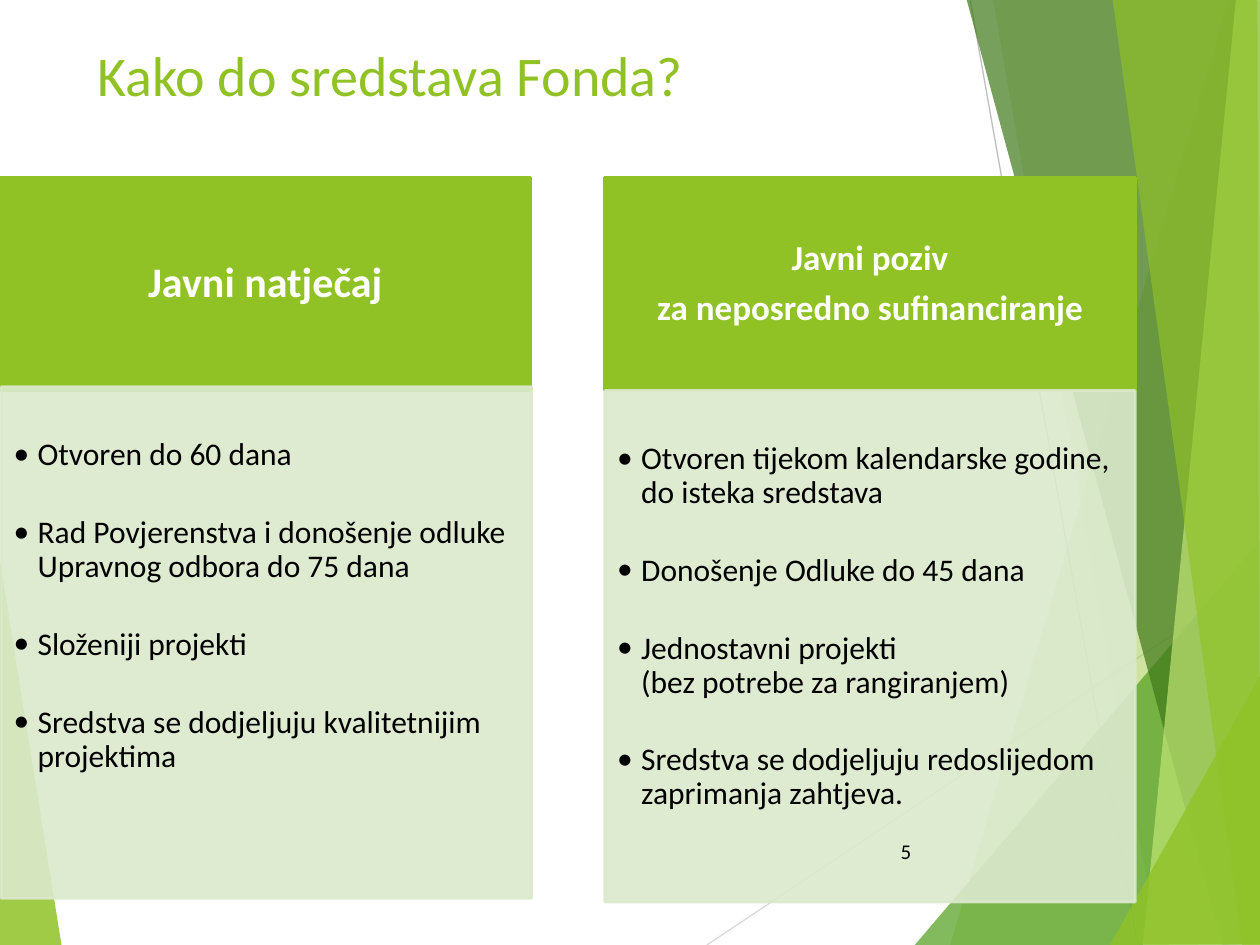
from typing import NamedTuple

from lxml.etree import SubElement
from pptx import Presentation
from pptx.dml.color import RGBColor
from pptx.enum.shapes import MSO_CONNECTOR, MSO_SHAPE
from pptx.enum.text import MSO_ANCHOR, PP_ALIGN
from pptx.oxml.ns import qn
from pptx.util import Pt

PX = 9144  # EMU per px, 100 px to the inch
FONT = "Calibri"
COLORS = {
    "green": "90C226", "leaf": "54A021", "forest": "3F7819", "lime": "C0E474",
    "pale": "DBE9CD", "grey": "BFBFBF", "light_grey": "D9D9D9",
    "white": "FFFFFF", "black": "000000",
}


class Facet(NamedTuple):
    points: list[tuple[int, int]]
    color: str
    opacity: int


class Ray(NamedTuple):
    start: tuple[int, int]
    end: tuple[int, int]
    color: str


class Column(NamedTuple):
    left: int
    heading: list[str]
    heading_size: int
    panel_left: int
    panel_top: int
    items: list[str]


RAYS = [
    Ray((561, 750), (1001, 457), "light_grey"),
    Ray((770, 0), (903, 750), "grey"),
]
LEFT_FACET = Facet([(-1, 439), (49, 751), (-1, 750)], "green", 85)
RIGHT_FACETS = [
    Facet([(975, 0), (754, 750), (1002, 751), (1001, 1)], "green", 30),
    Facet([(788, -1), (919, 750), (1001, 750), (1001, -1)], "green", 20),
    Facet([(726, 750), (1000, 429), (1001, 750)], "leaf", 72),
    Facet([(767, -1), (970, 750), (1001, 749), (1001, -1)], "forest", 70),
    Facet([(981, -1), (907, 750), (1001, 750), (1000, -1)], "lime", 70),
    Facet([(883, -1), (986, 750), (1000, 750), (998, -1)], "green", 65),
    Facet([(881, 750), (1001, 535), (1001, 749)], "green", 80),
]
COLUMNS = [
    Column(0, ["Javni natječaj"], 24, 1, 307, [
        "Otvoren do 60 dana",
        "Rad Povjerenstva i donošenje odluke Upravnog odbora do 75 dana",
        "Složeniji projekti",
        "Sredstva se dodjeljuju kvalitetnijim projektima",
    ]),
    Column(480, ["Javni poziv", "za neposredno sufinanciranje"], 20, 480, 310, [
        "Otvoren tijekom kalendarske godine, do isteka sredstava",
        "Donošenje Odluke do 45 dana",
        "Jednostavni projekti\n(bez potrebe za rangiranjem)",
        "Sredstva se dodjeljuju redoslijedom zaprimanja zahtjeva.",
    ]),
]
COLUMN_WIDTH, HEADING_TOP, HEADING_HEIGHT, PANEL_HEIGHT = 421, 141, 169, 406


def rgb(name: str) -> RGBColor:
    return RGBColor.from_string(COLORS[name])


def paint(fill, color: str, opacity: int = 100) -> None:
    fill.solid()
    fill.fore_color.rgb = rgb(color)
    if opacity < 100:
        # the colour element is the only child of the solid fill
        element = fill._xPr.find(qn("a:solidFill"))[0]
        SubElement(element, qn("a:alpha"), val=str(opacity * 1000))


def add_span(para, text: str, size: int, color: str, bold: bool = False) -> None:
    span = para.add_run()
    span.text = text
    span.font.name = FONT
    span.font.size = Pt(size)
    span.font.bold = bold
    span.font.color.rgb = rgb(color)


def add_facet(page, facet: Facet) -> None:
    first, *rest = facet.points
    builder = page.shapes.build_freeform(*first, scale=PX)
    builder.add_line_segments(rest, close=True)
    shape = builder.convert_to_shape()
    shape.shadow.inherit = False
    shape.line.fill.background()
    paint(shape.fill, facet.color, facet.opacity)


def add_ray(page, ray: Ray) -> None:
    ends = [value * PX for value in ray.start + ray.end]
    line = page.shapes.add_connector(MSO_CONNECTOR.STRAIGHT, *ends)
    line.line.color.rgb = rgb(ray.color)
    line.line.width = Pt(0.75)
    SubElement(line._element.spPr, qn("a:effectLst"))


def add_block(page, left: int, top: int, height: int, color: str,
              opacity: int, insets: tuple[int, int, int, int]):
    """Add a column rectangle and return its text frame."""
    block = page.shapes.add_shape(MSO_SHAPE.RECTANGLE, left * PX, top * PX,
                                  COLUMN_WIDTH * PX, height * PX)
    block.shadow.inherit = False
    paint(block.fill, color, opacity)
    paint(block.line.fill, color, opacity)
    block.line.width = Pt(1.5)
    frame = block.text_frame
    frame.word_wrap = True
    (frame.margin_left, frame.margin_top,
     frame.margin_right, frame.margin_bottom) = (inset * PX for inset in insets)
    return frame


def add_paras(frame, count: int, gap: int, align: PP_ALIGN) -> list:
    paras = [frame.paragraphs[0]] + [frame.add_paragraph() for _ in range(count - 1)]
    for para in paras:
        para.alignment = align
        para.line_spacing = 0.9
    for para in paras[:-1]:
        para.space_after = Pt(gap)
    return paras


def set_bullet(para) -> None:
    properties = para._p.get_or_add_pPr()
    properties.set("marL", str(19 * PX))
    properties.set("indent", str(-19 * PX))
    SubElement(properties, qn("a:buFont"), typeface=FONT)
    SubElement(properties, qn("a:buChar"), char="•")


def add_column(page, column: Column) -> None:
    frame = add_block(page, column.left, HEADING_TOP, HEADING_HEIGHT,
                      "green", 100, (16, 9, 16, 9))
    frame.vertical_anchor = MSO_ANCHOR.MIDDLE
    paras = add_paras(frame, len(column.heading), 7, PP_ALIGN.CENTER)
    for para, text in zip(paras, column.heading):
        add_span(para, text, column.heading_size, "white", bold=True)

    frame = add_block(page, column.panel_left, column.panel_top, PANEL_HEIGHT,
                      "pale", 90, (10, 41, 14, 16))
    frame.vertical_anchor = MSO_ANCHOR.TOP
    paras = add_paras(frame, len(column.items), 25, PP_ALIGN.LEFT)
    for para, item in zip(paras, column.items):
        set_bullet(para)
        for index, text in enumerate(item.split("\n")):
            if index:
                para.add_line_break()
            add_span(para, text, 18, "black")


def set_title(page, text: str) -> None:
    title = page.shapes.title
    title.left, title.top, title.width, title.height = (
        value * PX for value in (67, 27, 721, 104))
    title.text_frame.vertical_anchor = MSO_ANCHOR.TOP
    para = title.text_frame.paragraphs[0]
    para.alignment = PP_ALIGN.LEFT
    add_span(para, text, 32, "green")


def add_page_number(page, text: str) -> None:
    box = page.shapes.add_textbox(*(value * PX for value in (705, 661, 56, 40)))
    box.text_frame.word_wrap = True
    add_span(box.text_frame.paragraphs[0], text, 12, "black")


def main() -> None:
    deck = Presentation()
    deck.slide_width, deck.slide_height = 1000 * PX, 750 * PX
    page = deck.slides.add_slide(deck.slide_layouts.get_by_name("Title Only"))
    set_title(page, "Kako do sredstava Fonda?")
    add_facet(page, LEFT_FACET)
    for ray in RAYS:
        add_ray(page, ray)
    for facet in RIGHT_FACETS:
        add_facet(page, facet)
    for column in COLUMNS:
        add_column(page, column)
    add_page_number(page, "5")
    deck.save("out.pptx")


if __name__ == "__main__":
    main()
